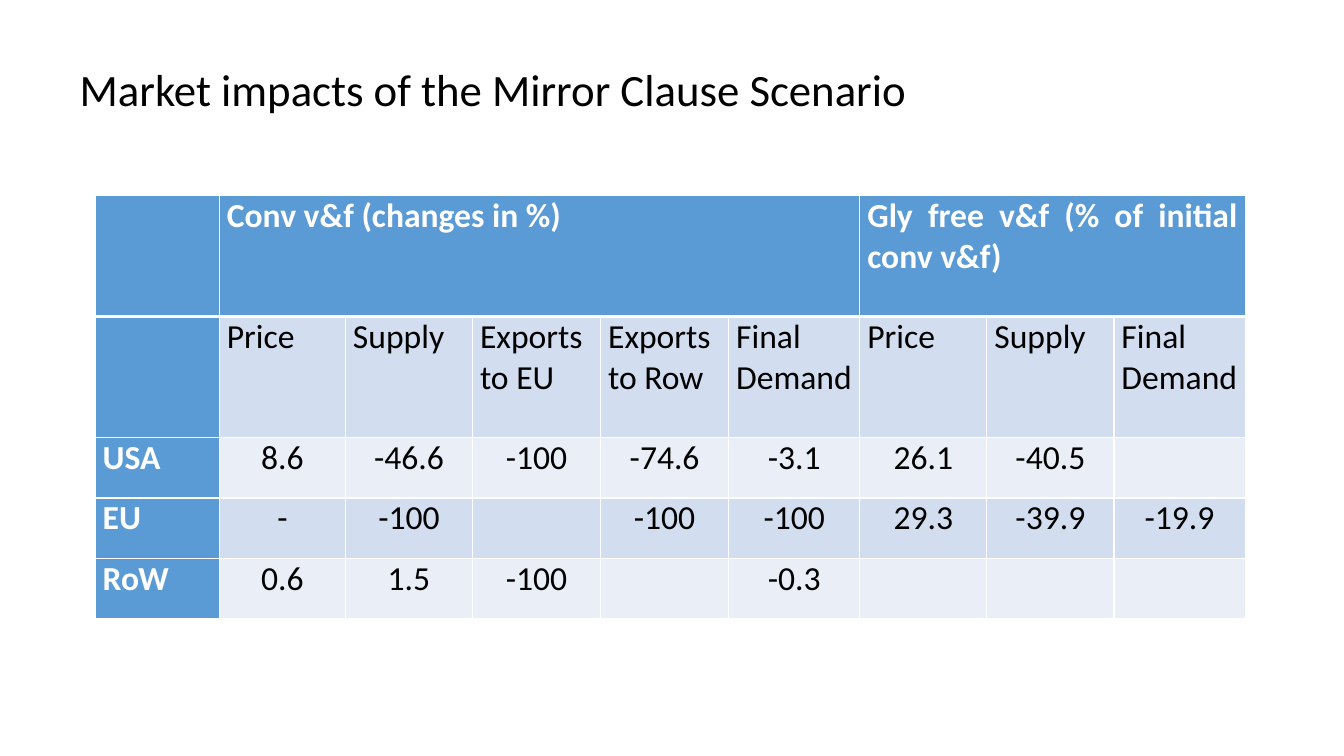
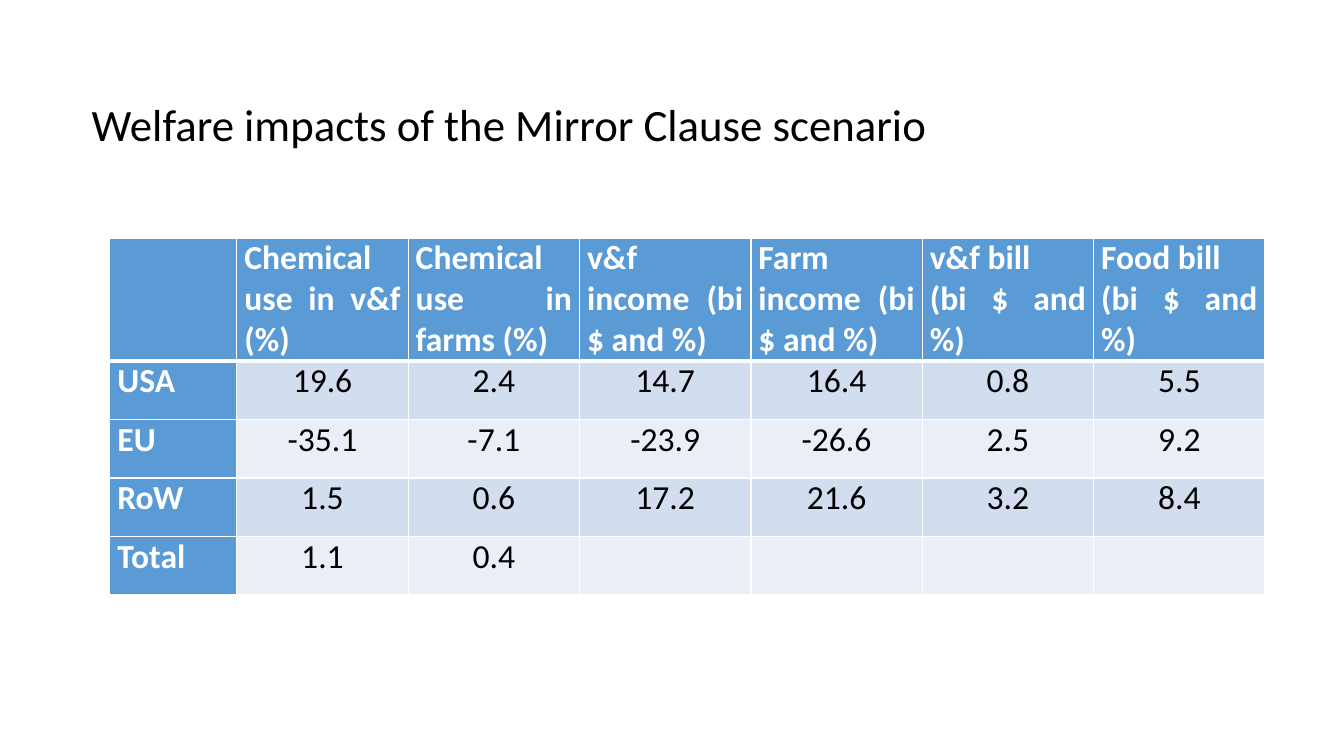
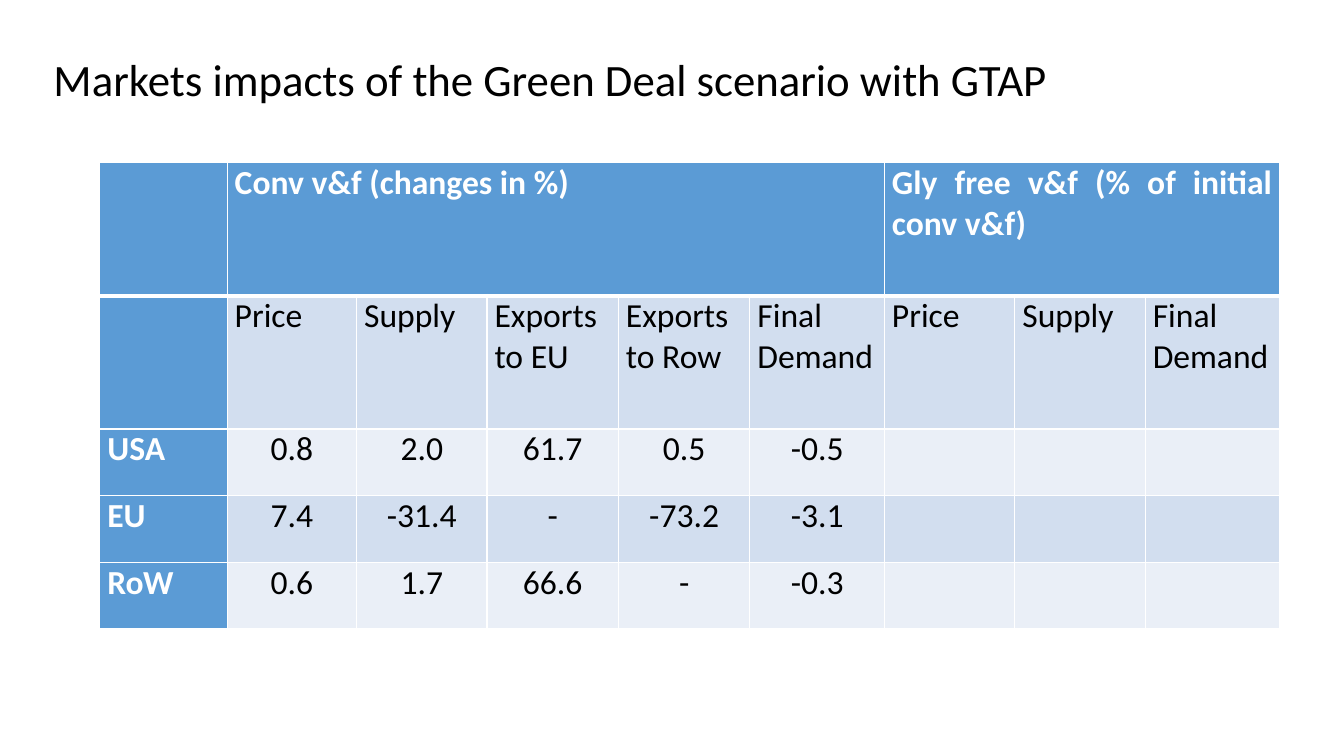
from lxml import etree
from pptx import Presentation
from pptx.dml.color import RGBColor
from pptx.enum.text import MSO_ANCHOR, PP_ALIGN
from pptx.oxml.ns import qn
from pptx.util import Pt

LEFT, CENTER, JUSTIFY = PP_ALIGN.LEFT, PP_ALIGN.CENTER, PP_ALIGN.JUSTIFY
TOP = MSO_ANCHOR.TOP

TITLE_ONLY = 5
FONT = "Calibri"
TITLE_SIZE, TABLE_SIZE = 32, 24
TITLE_HEIGHT = 46
CELL_MARGIN = 5.4
THIN, THICK = 1, 3
COLORS = {
    "header": "5B9BD5",
    "band_dark": "D2DEEF",
    "band_light": "EAEFF7",
    "white": "FFFFFF",
    "black": "000000",
}

MARKET_COLS = [88.6, 90, 90.7, 91.4, 91.4, 93.6, 90.7, 90.7, 93.6]
MARKET_ROWS = [2, 2, 1, 1, 1]
MARKET_SPANS = [(1, 5), (6, 8)]
MARKET_HEAD = [
    ["", "Conv v&f (changes in %)", "", "", "", "",
     "Gly free v&f (% of initial conv v&f)", "", ""],
    ["", "Price", "Supply", "Exports to EU", "Exports to Row", "Final Demand",
     "Price", "Supply", "Final Demand"],
]
MIRROR_MARKET = [
    ["USA", "8.6", "-46.6", "-100", "-74.6", "-3.1", "26.1", "-40.5", ""],
    ["EU", "-", "-100", "", "-100", "-100", "29.3", "-39.9", "-19.9"],
    ["RoW", "0.6", "1.5", "-100", "", "-0.3", "", "", ""],
]
GREEN_DEAL_MARKET = [
    ["USA", "0.8", "2.0", "61.7", "0.5", "-0.5", "", "", ""],
    ["EU", "7.4", "-31.4", "-", "-73.2", "-3.1", "", "", ""],
    ["RoW", "0.6", "1.7", "66.6", "-", "-0.3", "", "", ""],
]
WELFARE_COLS = [90.7] + [122.4] * 6
WELFARE_ROWS = [2, 1, 1, 1, 1]
WELFARE = [
    ["", "Chemical use in v&f (%)", "Chemical use in farms (%)",
     "v&f income (bi $ and %)", "Farm income (bi $ and %)",
     "v&f bill\n(bi $ and %)", "Food bill\n(bi $ and %)"],
    ["USA", "19.6", "2.4", "14.7", "16.4", "0.8", "5.5"],
    ["EU", "-35.1", "-7.1", "-23.9", "-26.6", "2.5", "9.2"],
    ["RoW", "1.5", "0.6", "17.2", "21.6", "3.2", "8.4"],
    ["Total", "1.1", "0.4", "", "", "", ""],
]


def rgb(name):
    return RGBColor.from_string(COLORS[name])


def style_paragraph(p, size, color, align, bold=False):
    p.alignment = align
    p.font.name = FONT
    p.font.size = Pt(size)
    p.font.bold = bold
    p.font.color.rgb = rgb(color)


def add_titled_slide(prs, title, left, top, width):
    s = prs.slides.add_slide(prs.slide_layouts[TITLE_ONLY])
    sp = s.shapes.title
    sp.left, sp.top = Pt(left), Pt(top)
    sp.width, sp.height = Pt(width), Pt(TITLE_HEIGHT)
    tf = sp.text_frame
    tf.text = title
    tf.vertical_anchor = TOP
    style_paragraph(tf.paragraphs[0], TITLE_SIZE, "black", LEFT)
    return s


def set_borders(cell, top, bottom):
    """Draw white cell borders; they must precede the fill in the XML."""
    tc_pr = cell._tc.get_or_add_tcPr()
    edges = {"a:lnL": THIN, "a:lnR": THIN, "a:lnT": top, "a:lnB": bottom}
    for i, (tag, width) in enumerate(edges.items()):
        ln = etree.Element(qn(tag), w=str(Pt(width)))
        fill = etree.SubElement(ln, qn("a:solidFill"))
        etree.SubElement(fill, qn("a:srgbClr"), val=COLORS["white"])
        tc_pr.insert(i, ln)


def style_cell(cell, row, col, text, head_rows):
    is_header = row == 0 or col == 0
    band = "band_dark" if row % 2 else "band_light"
    cell.text = text
    cell.margin_left = cell.margin_right = Pt(CELL_MARGIN)
    cell.margin_top = cell.margin_bottom = 0
    cell.fill.solid()
    cell.fill.fore_color.rgb = rgb("header" if is_header else band)
    set_borders(cell, THICK if row == 1 else THIN, THICK if row == 0 else THIN)
    for p in cell.text_frame.paragraphs:
        style_paragraph(p, TABLE_SIZE, "white" if is_header else "black",
                        JUSTIFY if col == 0 or row < head_rows else CENTER,
                        is_header)


def add_data_table(s, left, top, cols, row_heights, data, head_rows=1, spans=()):
    """Add a banded table; spans lists (first, last) columns merged in row 0."""
    frame = s.shapes.add_table(len(data), len(cols), Pt(left), Pt(top),
                               Pt(sum(cols)), Pt(sum(row_heights)))
    table = frame.table
    table.first_col = True
    for column, width in zip(table.columns, cols):
        column.width = Pt(width)
    for row, height in zip(table.rows, row_heights):
        row.height = Pt(height)
    for r, values in enumerate(data):
        for c, text in enumerate(values):
            style_cell(table.cell(r, c), r, c, text, head_rows)
    for first, last in spans:
        table.cell(0, first).merge(table.cell(0, last))


def add_market_table(s, left, top, width, row_unit, data):
    scale = width / sum(MARKET_COLS)
    add_data_table(s, left, top, [w * scale for w in MARKET_COLS],
                   [n * row_unit for n in MARKET_ROWS], MARKET_HEAD + data,
                   head_rows=2, spans=MARKET_SPANS)


def main():
    prs = Presentation()
    prs.slide_width, prs.slide_height = Pt(960), Pt(540)

    s = add_titled_slide(prs, "Market impacts of the Mirror Clause Scenario",
                         49.7, 40.3, 873)
    add_market_table(s, 68, 139.7, 821.5, 43.2, MIRROR_MARKET)

    s = add_titled_slide(prs, "Welfare impacts of the Mirror Clause scenario",
                         58.3, 65.5, 836)
    add_data_table(s, 78.5, 170, WELFARE_COLS,
                   [n * 41.8 for n in WELFARE_ROWS], WELFARE)

    s = add_titled_slide(prs, "Markets impacts of the Green Deal scenario with GTAP",
                         31, 33, 901)
    add_market_table(s, 71.3, 116, 843, 47.6, GREEN_DEAL_MARKET)

    prs.save("out.pptx")


if __name__ == "__main__":
    main()
